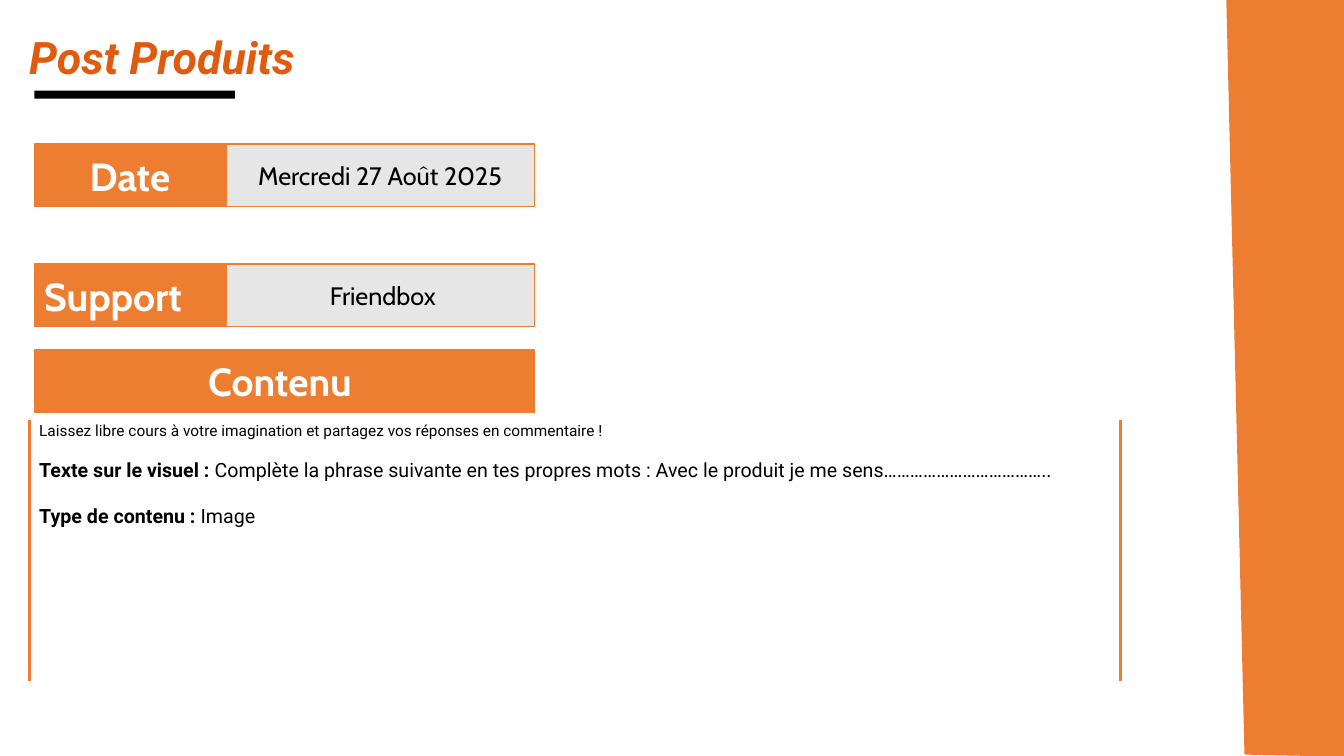
from dataclasses import dataclass

from lxml import etree
from pptx import Presentation
from pptx.dml.color import RGBColor
from pptx.enum.shapes import MSO_CONNECTOR as Connector, MSO_SHAPE as Shape
from pptx.enum.text import MSO_ANCHOR as Anchor, PP_ALIGN as Align
from pptx.oxml.ns import qn
from pptx.util import Inches, Pt

ORANGE, TITLE_ORANGE = "ED7D31", "E15B0F"
GREY, BLACK, WHITE = "E7E6E6", "000000", "FFFFFF"

LABEL_FORMAT = {"name": "Cabin", "size": Pt(28), "bold": True}
VALUE_FORMAT = {"name": "Cabin", "size": Pt(18), "bold": False}
TITLE_FORMAT = {"name": "Roboto", "size": Pt(32), "bold": True, "italic": True}

LEFT, LABEL_WIDTH, VALUE_WIDTH, ROW_HEIGHT = 0.34, 1.9, 3.06, 0.62


@dataclass
class Cell:
    text: str
    left: float
    top: float
    width: float
    fill: str
    color: str
    text_format: dict
    align: Align = Align.CENTER


@dataclass
class Line:
    heading: str
    body: str
    size: int
    gap: float


def rgb(color: str) -> RGBColor:
    return RGBColor.from_string(color)


def paint(shape, fill: str, outline: str | None = None) -> None:
    shape.shadow.inherit = False
    shape.fill.solid()
    shape.fill.fore_color.rgb = rgb(fill)
    if outline:
        shape.line.color.rgb = rgb(outline)
        shape.line.width = Pt(1)
    else:
        shape.line.fill.background()


def add_run(paragraph, text: str, color: str, text_format: dict) -> None:
    run = paragraph.add_run()
    run.text = text
    run.font.color.rgb = rgb(color)
    for attribute, value in text_format.items():
        setattr(run.font, attribute, value)


def draw_cell(shapes, cell: Cell) -> None:
    box = shapes.add_shape(Shape.RECTANGLE, Inches(cell.left), Inches(cell.top),
                           Inches(cell.width), Inches(ROW_HEIGHT))
    paint(box, cell.fill, ORANGE)
    box.text_frame.vertical_anchor = Anchor.MIDDLE
    paragraph = box.text_frame.paragraphs[0]
    paragraph.alignment = cell.align
    add_run(paragraph, cell.text, cell.color, cell.text_format)


def draw_rule(shapes, x: float) -> None:
    rule = shapes.add_connector(Connector.STRAIGHT, Inches(x), Inches(4.17),
                                Inches(x), Inches(6.76))
    rule.line.color.rgb = rgb(ORANGE)
    rule.line.width = Pt(2.25)
    etree.SubElement(rule._element.spPr, qn("a:effectLst"))


def add_frame(shapes, left: float, top: float, width: float, height: float):
    frame = shapes.add_textbox(Inches(left), Inches(top),
                               Inches(width), Inches(height)).text_frame
    frame.word_wrap = True
    return frame


def label(text: str, top: float, width: float = LABEL_WIDTH,
          align: Align = Align.CENTER) -> Cell:
    return Cell(text, LEFT, top, width, ORANGE, WHITE, LABEL_FORMAT, align)


def value(text: str, top: float) -> Cell:
    return Cell(text, LEFT + LABEL_WIDTH, top, VALUE_WIDTH, GREY, BLACK, VALUE_FORMAT)


CELLS = [
    label("Date", 1.43),
    value("Mercredi 27 Août 2025", 1.43),
    label("Support", 2.62, align=Align.LEFT),
    value(" Friendbox", 2.62),
    label("Contenu ", 3.47, LABEL_WIDTH + VALUE_WIDTH),
]

CONTENT = [
    Line("", "Laissez libre cours à votre imagination et partagez vos réponses "
         "en commentaire !", 11, 0),
    Line("Texte sur le visuel : ", "Complète la phrase suivante en tes propres mots : "
         "Avec le produit je me sens………………………………..", 14, 12.9),
    Line("Type de contenu : ", "Image", 14, 16.4),
]


def main() -> None:
    deck = Presentation()
    deck.slide_width, deck.slide_height = Inches(13.33), Inches(7.5)
    shapes = deck.slides.add_slide(deck.slide_layouts[6]).shapes

    # Slanted band on the right
    outline = shapes.build_freeform(Inches(12.17), 0)
    outline.add_line_segments([(Inches(x), Inches(y)) for x, y in
                               [(13.33, 0), (13.33, 7.5), (12.35, 7.48)]])
    paint(outline.convert_to_shape(), ORANGE, ORANGE)

    # Title and its underline
    underline = shapes.add_shape(Shape.RECTANGLE, Inches(LEFT), Inches(0.9),
                                 Inches(1.99), Inches(0.08))
    paint(underline, BLACK)
    title = add_frame(shapes, 0.19, 0.25, 11.03, 0.52).paragraphs[0]
    title.alignment = Align.JUSTIFY
    add_run(title, "Post Produits", TITLE_ORANGE, TITLE_FORMAT)

    # Labels and values
    for cell in CELLS:
        draw_cell(shapes, cell)

    # Content between two rules
    for x in (0.29, 11.11):
        draw_rule(shapes, x)
    content = add_frame(shapes, 0.29, 4.13, 10.82, 1.18)
    for index, line in enumerate(CONTENT):
        paragraph = content.add_paragraph() if index else content.paragraphs[0]
        paragraph.space_before = Pt(line.gap)
        for text, bold in ((line.heading, True), (line.body, False)):
            if text:
                add_run(paragraph, text, BLACK,
                        {"name": "Roboto", "size": Pt(line.size), "bold": bold})

    deck.save("out.pptx")


if __name__ == "__main__":
    main()
